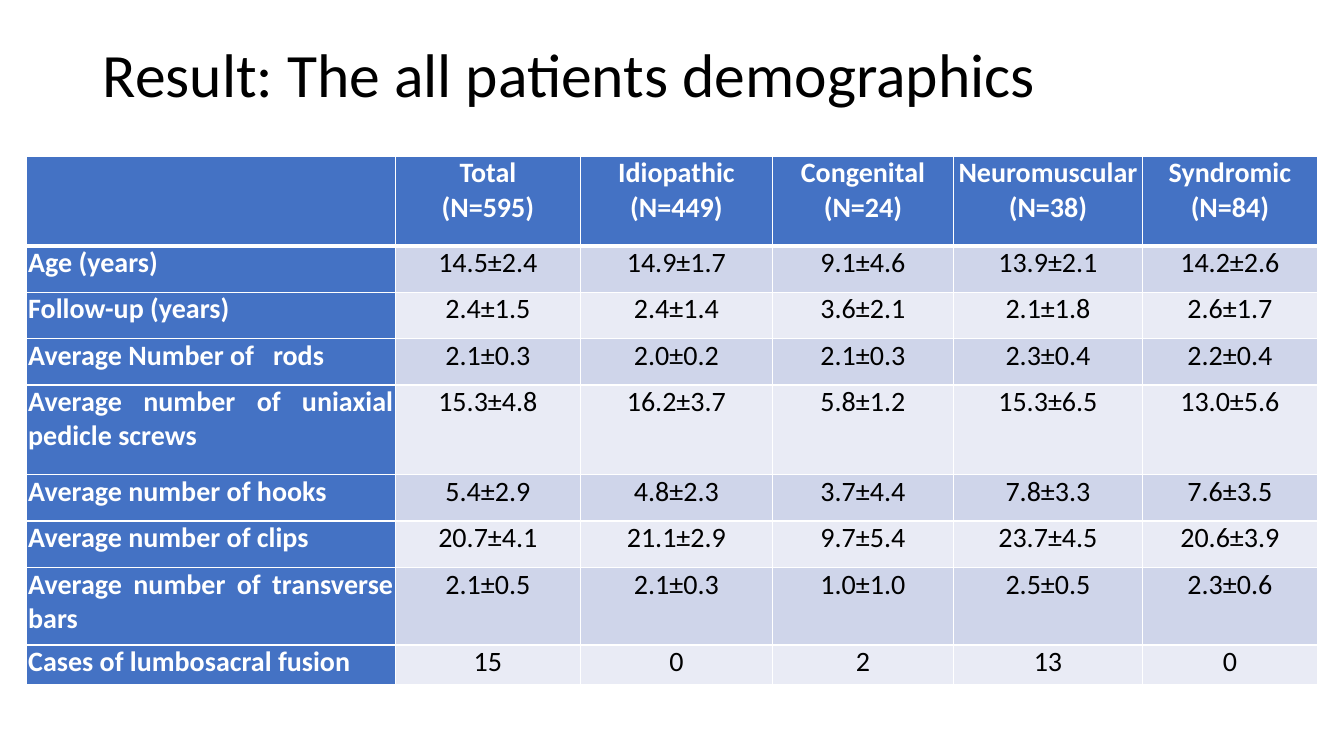
"""Build the patient demographics slide."""
from dataclasses import dataclass

from lxml.etree import SubElement
from pptx import Presentation
from pptx.dml.color import RGBColor
from pptx.enum.text import MSO_ANCHOR, PP_ALIGN
from pptx.oxml.ns import qn
from pptx.util import Inches, Pt

WIDTH, HEIGHT = 13.33, 7.5
FONT = "Calibri"
WHITE, BLACK, BLUE = "FFFFFF", "000000", "4472C4"
BANDS = ("CFD5EA", "E9EBF5")
COLUMNS = (3.66, 1.84, 1.9, 1.8, 1.87, 1.74)
GROUPS = {"Total": 595, "Idiopathic": 449, "Congenital": 24, "Neuromuscular": 38, "Syndromic": 84}
HEADER_HEIGHT = 0.89
THIN, THICK = 1, 3


@dataclass
class Measure:
    """One row of the table: its label, its values by group and its height."""
    label: str
    values: str
    height: float = 0.46


@dataclass
class CellStyle:
    """The look of one kind of cell."""
    fill: str
    ink: str
    bold: bool
    align: PP_ALIGN


MEASURES = (
    Measure("Age (years)", "14.5±2.4 14.9±1.7 9.1±4.6 13.9±2.1 14.2±2.6"),
    Measure("Follow-up (years)", "2.4±1.5 2.4±1.4 3.6±2.1 2.1±1.8 2.6±1.7"),
    Measure("Average Number of   rods", "2.1±0.3 2.0±0.2 2.1±0.3 2.3±0.4 2.2±0.4"),
    Measure("Average number of uniaxial pedicle screws", "15.3±4.8 16.2±3.7 5.8±1.2 15.3±6.5 13.0±5.6", 0.89),
    Measure("Average number of hooks", "5.4±2.9 4.8±2.3 3.7±4.4 7.8±3.3 7.6±3.5"),
    Measure("Average number of clips", "20.7±4.1 21.1±2.9 9.7±5.4 23.7±4.5 20.6±3.9"),
    Measure("Average number of transverse bars", "2.1±0.5 2.1±0.3 1.0±1.0 2.5±0.5 2.3±0.6", 0.77),
    Measure("Cases of lumbosacral fusion", "15 0 2 13 0", 0.39),
)
HEADER = CellStyle(BLUE, WHITE, True, PP_ALIGN.CENTER)
LABEL = CellStyle(BLUE, WHITE, True, PP_ALIGN.JUSTIFY)
VALUES = tuple(CellStyle(band, BLACK, False, PP_ALIGN.CENTER) for band in BANDS)


def color(code: str) -> RGBColor:
    """Turn a hex string into a colour."""
    return RGBColor.from_string(code)


def format_text(frame, size: float, ink: str, bold: bool, align: PP_ALIGN) -> None:
    """Format every paragraph and run of a text frame."""
    for para in frame.paragraphs:
        para.alignment = align
        for span in para.runs:
            span.font.name = FONT
            span.font.size = Pt(size)
            span.font.bold = bold
            span.font.color.rgb = color(ink)


def add_borders(cell, top: float, bottom: float) -> None:
    """Draw white borders on the four sides of a cell."""
    properties = cell._tc.get_or_add_tcPr()
    widths = {"a:lnL": THIN, "a:lnR": THIN, "a:lnT": top, "a:lnB": bottom}
    for position, (side, width) in enumerate(widths.items()):
        line = SubElement(properties, qn(side), w=str(Pt(width)))
        SubElement(SubElement(line, qn("a:solidFill")), qn("a:srgbClr"), val=WHITE)
        properties.insert(position, line)


def fill_cell(cell, text: str, style: CellStyle) -> None:
    """Write and style one cell."""
    cell.text_frame.text = text
    cell.margin_left = cell.margin_right = Inches(0.02)
    cell.margin_top = cell.margin_bottom = 0
    cell.fill.solid()
    cell.fill.fore_color.rgb = color(style.fill)
    format_text(cell.text_frame, 20, style.ink, style.bold, style.align)


def add_title(page, text: str) -> None:
    """Add the slide title."""
    box = page.shapes.add_textbox(Inches(0.92), Inches(0.04), Inches(11.5), Inches(1.45))
    frame = box.text_frame
    frame.word_wrap = True
    frame.vertical_anchor = MSO_ANCHOR.MIDDLE
    frame.text = text
    frame.paragraphs[0].line_spacing = 0.9
    format_text(frame, 44, BLACK, False, PP_ALIGN.LEFT)


def add_demographics(page) -> None:
    """Add the table of measures by patient group."""
    heights = [HEADER_HEIGHT] + [measure.height for measure in MEASURES]
    headings = [""] + [f"{name}\n(N={count})" for name, count in GROUPS.items()]
    texts = [headings] + [[measure.label, *measure.values.split()] for measure in MEASURES]
    table = page.shapes.add_table(
        len(heights), len(COLUMNS), Inches(0.26), Inches(1.55),
        Inches(sum(COLUMNS)), Inches(sum(heights))).table
    for column, width in zip(table.columns, COLUMNS):
        column.width = Inches(width)
    for index, (row, height) in enumerate(zip(table.rows, heights)):
        row.height = Inches(height)
        top = THICK if index == 1 else THIN
        bottom = THICK if index == 0 else THIN
        label, value = (HEADER, HEADER) if index == 0 else (LABEL, VALUES[(index - 1) % 2])
        for place, (cell, text) in enumerate(zip(row.cells, texts[index])):
            fill_cell(cell, text, value if place else label)
            add_borders(cell, top, bottom)


def main() -> None:
    """Build and save the deck."""
    deck = Presentation()
    deck.slide_width, deck.slide_height = Inches(WIDTH), Inches(HEIGHT)
    page = deck.slides.add_slide(deck.slide_layouts[6])
    add_title(page, "Result: The all patients demographics")
    add_demographics(page)
    deck.save("out.pptx")


if __name__ == "__main__":
    main()
